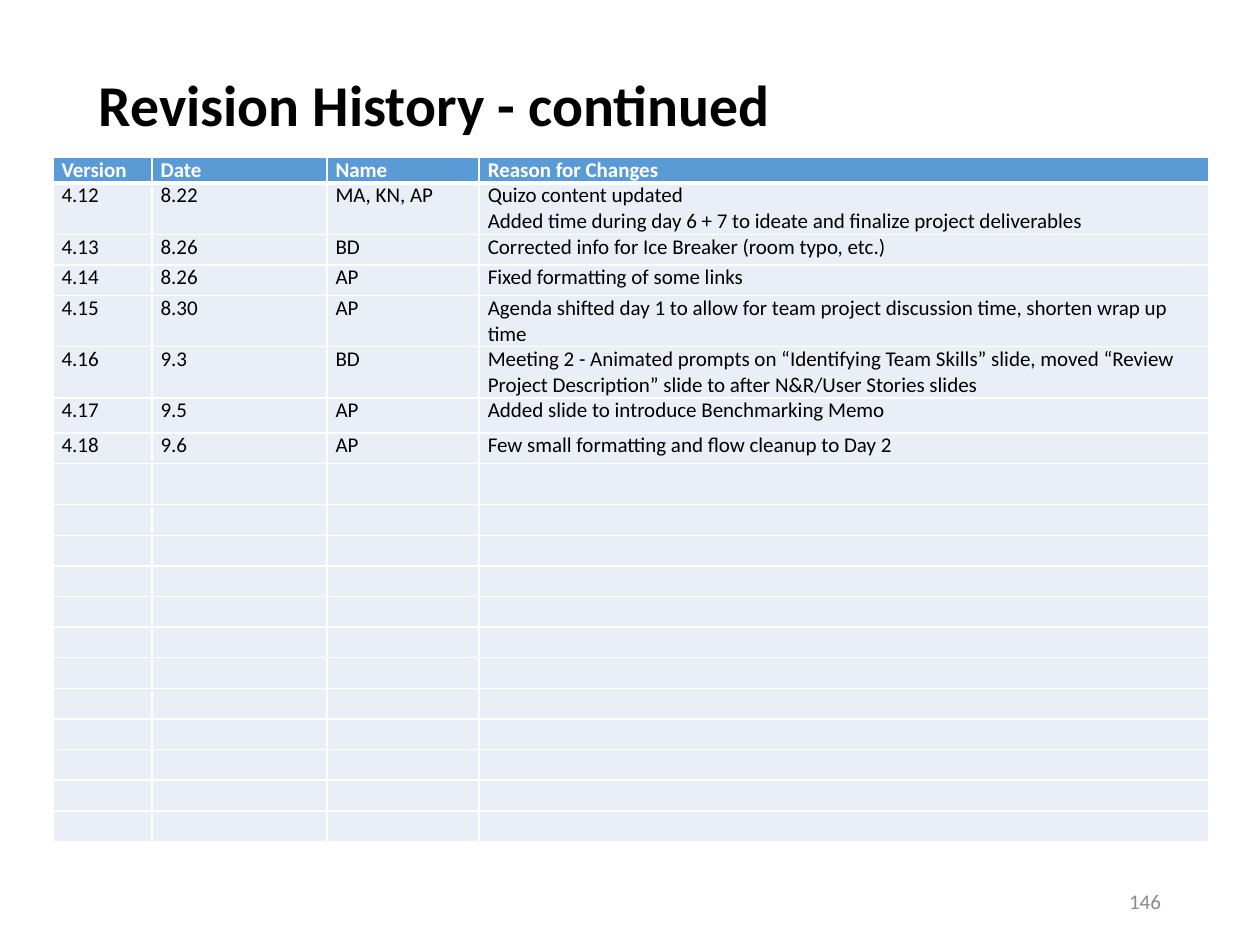
import pptx
import pptx.dml.color
import pptx.enum.text
import pptx.oxml.ns
import pptx.util
from lxml import etree

Pt = pptx.util.Pt
RGBColor = pptx.dml.color.RGBColor
ANCHOR = pptx.enum.text.MSO_ANCHOR
ALIGN = pptx.enum.text.PP_ALIGN

BLACK = RGBColor(0x00, 0x00, 0x00)
WHITE = RGBColor(0xFF, 0xFF, 0xFF)
GRAY = RGBColor(0x8C, 0x8C, 0x8C)
HEADER_BLUE = RGBColor(0x5B, 0x9B, 0xD5)
ROW_BLUE = RGBColor(0xEA, 0xEF, 0xF7)

FONT = "Calibri"
BODY_SIZE = 12
ROW_HEIGHT = 17.5
ROW_COUNT = 20
COLUMN_WIDTHS = [56.6, 100, 87, 416.7]
# Rows that differ from the usual height
SPECIAL_HEIGHTS = {0: 14.6, 1: 29.3, 4: 29.3, 5: 29.3, 6: 20, 8: 23.5}

REVISIONS = [
    ["Version", "Date", "Name", "Reason for Changes"],
    ["4.12", "8.22", "MA, KN, AP",
     "Quizo content updated\n"
     "Added time during day 6 + 7 to ideate and finalize project deliverables"],
    ["4.13", "8.26", "BD", "Corrected info for Ice Breaker (room typo, etc.)"],
    ["4.14", "8.26", "AP", "Fixed formatting of some links"],
    ["4.15", "8.30", "AP",
     "Agenda shifted day 1 to allow for team project discussion time, shorten wrap up time"],
    ["4.16", "9.3", "BD",
     "Meeting 2 - Animated prompts on “Identifying Team Skills” slide, moved "
     "“Review Project Description” slide to after N&R/User Stories slides"],
    ["4.17", "9.5", "AP", "Added slide to introduce Benchmarking Memo"],
    ["4.18", "9.6", "AP", "Few small formatting and flow cleanup to Day 2"],
]


def add_span(para, text, size, color, bold=False):
    span = para.add_run()
    span.text = text
    span.font.name = FONT
    span.font.size = Pt(size)
    span.font.bold = bold
    span.font.color.rgb = color


def add_text(page, left, top, width, height, text, size, color, bold=False):
    box = page.shapes.add_textbox(Pt(left), Pt(top), Pt(width), Pt(height))
    frame = box.text_frame
    frame.word_wrap = True
    frame.vertical_anchor = ANCHOR.MIDDLE
    add_span(frame.paragraphs[0], text, size, color, bold)
    return frame


def set_borders(cell, top, bottom):
    properties = cell._tc.get_or_add_tcPr()
    for side, width in (("L", 1), ("R", 1), ("T", top), ("B", bottom)):
        line = etree.SubElement(properties, pptx.oxml.ns.qn(f"a:ln{side}"), w=str(Pt(width)))
        fill = etree.SubElement(line, pptx.oxml.ns.qn("a:solidFill"))
        etree.SubElement(fill, pptx.oxml.ns.qn("a:srgbClr"), val=str(WHITE))


def fill_cell(cell, text, row):
    header = row == 0
    cell.margin_left = cell.margin_right = Pt(5)
    cell.margin_top = cell.margin_bottom = Pt(0)
    set_borders(cell, top=3 if row == 1 else 1, bottom=3 if header else 1)
    cell.fill.solid()
    cell.fill.fore_color.rgb = HEADER_BLUE if header else ROW_BLUE

    frame = cell.text_frame
    if not text:
        # Empty cells keep the body size so that their rows stay low
        etree.SubElement(frame.paragraphs[0]._p, pptx.oxml.ns.qn("a:endParaRPr"),
                         sz=str(BODY_SIZE * 100))
        return
    for index, line in enumerate(text.split("\n")):
        para = frame.add_paragraph() if index else frame.paragraphs[0]
        add_span(para, line, BODY_SIZE, WHITE if header else BLACK, header)


def add_revision_table(page):
    heights = [SPECIAL_HEIGHTS.get(row, ROW_HEIGHT) for row in range(ROW_COUNT)]
    table = page.shapes.add_table(ROW_COUNT, len(COLUMN_WIDTHS), Pt(30.2), Pt(90),
                                  Pt(sum(COLUMN_WIDTHS)), Pt(sum(heights))).table
    for column, width in zip(table.columns, COLUMN_WIDTHS):
        column.width = Pt(width)
    for row, height in enumerate(heights):
        table.rows[row].height = Pt(height)
        texts = REVISIONS[row] if row < len(REVISIONS) else [""] * len(COLUMN_WIDTHS)
        for column, text in enumerate(texts):
            fill_cell(table.cell(row, column), text, row)


def main():
    deck = pptx.Presentation()
    deck.slide_width, deck.slide_height = Pt(720), Pt(540)
    page = deck.slides.add_slide(deck.slide_layouts[6])

    # Title, raised above the middle of its box by the bottom margin
    title = add_text(page, 49.5, 28.8, 621, 104.4, "Revision History - continued", 33, BLACK, True)
    title.margin_bottom = Pt(42)
    title.paragraphs[0].line_spacing = 0.9

    # Revision table
    add_revision_table(page)

    # Page number
    number = add_text(page, 508.5, 500.5, 162, 28.8, "146", 12, GRAY)
    number.paragraphs[0].alignment = ALIGN.RIGHT

    deck.save("out.pptx")


if __name__ == "__main__":
    main()
